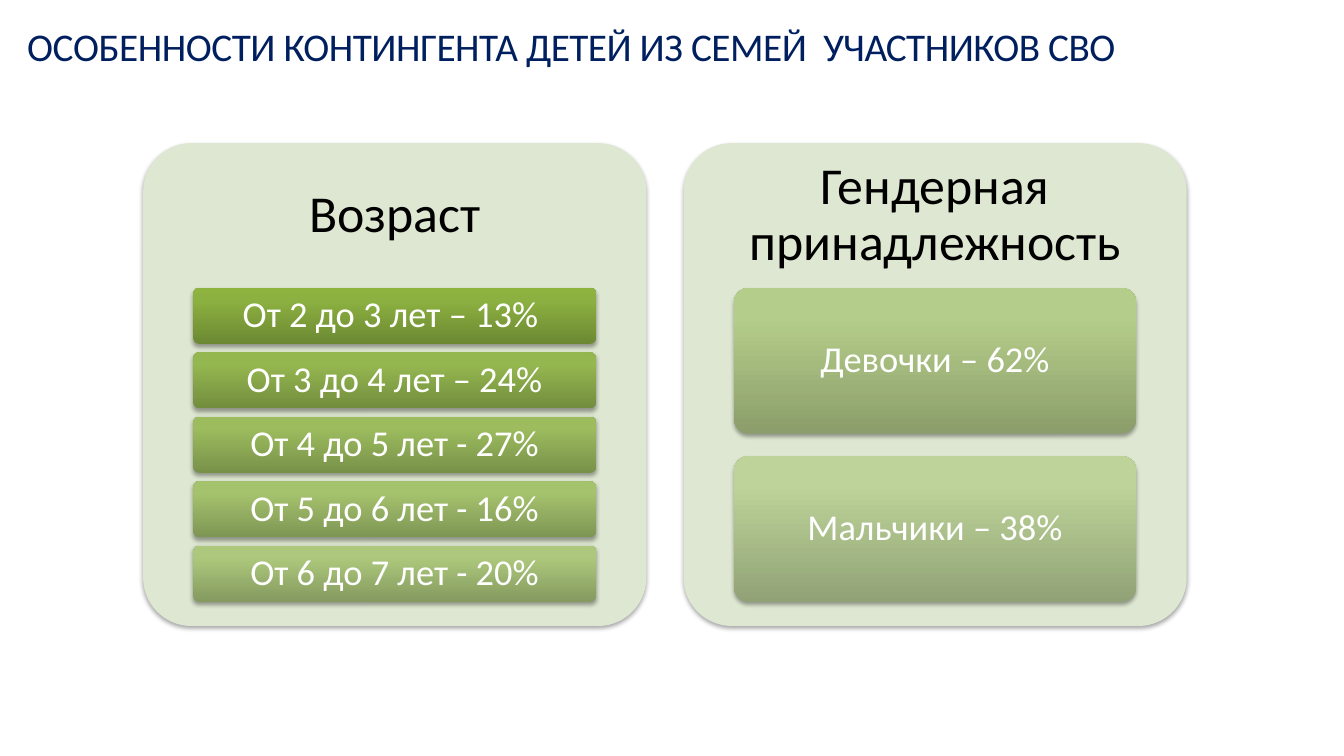
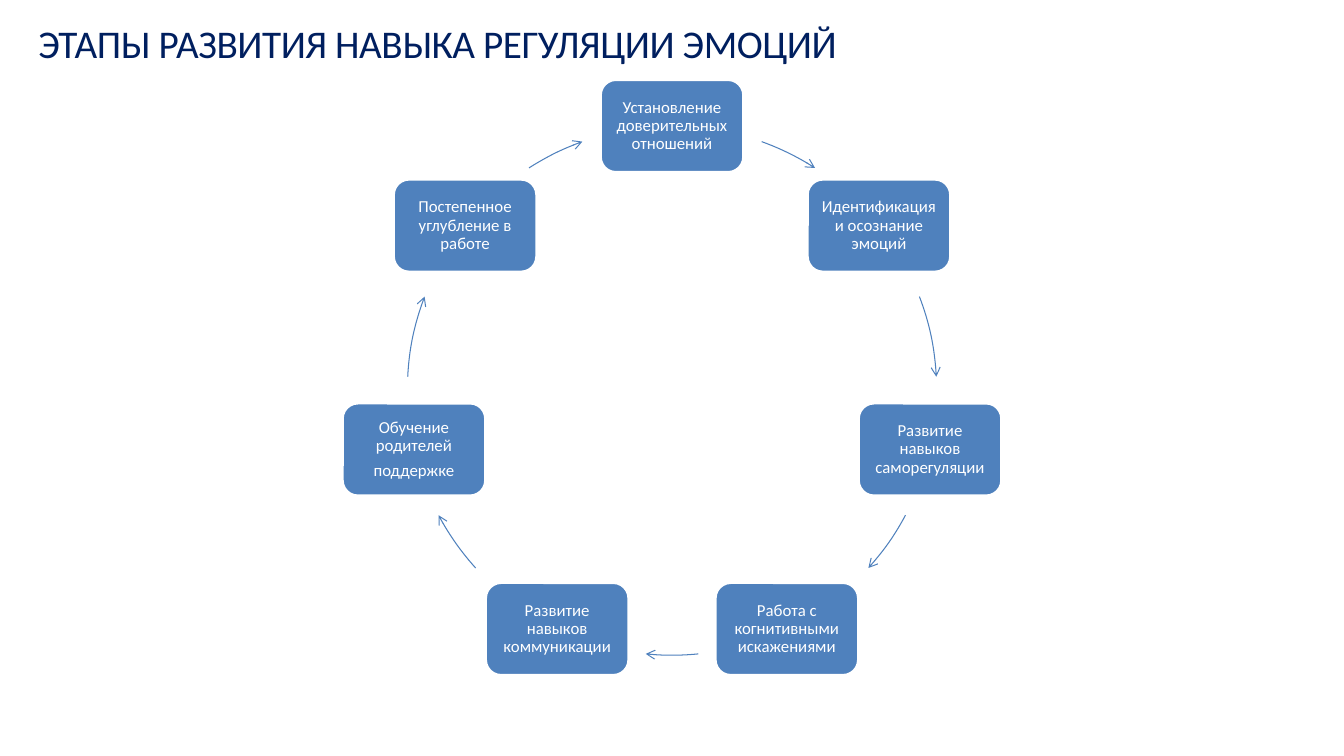
from copy import deepcopy
from math import cos, pi, sin

from lxml import etree
from pptx import Presentation
from pptx.dml.color import RGBColor
from pptx.enum.shapes import MSO_SHAPE as SHAPE
from pptx.enum.text import MSO_ANCHOR as ANCHOR, MSO_AUTO_SIZE as AUTO_SIZE, PP_ALIGN as ALIGN
from pptx.oxml.ns import qn
from pptx.util import Emu, Pt

PX = 9144  # EMU, 100 px to the inch
FONT = "Calibri"
NAVY = RGBColor(0x00, 0x1F, 0x5F)
BLACK = RGBColor(0x00, 0x00, 0x00)
WHITE = RGBColor(0xFF, 0xFF, 0xFF)
BLUE = RGBColor(0x4F, 0x81, 0xBD)
PANEL_GREEN = RGBColor(0xDE, 0xE7, 0xD1)
# Gradient stops: position, colour on the first card, colour on the last card
CARD_RAMP = [
    (0, RGBColor(0x6C, 0x89, 0x32), RGBColor(0x91, 0xA2, 0x76)),
    (0.8, RGBColor(0x8D, 0xB1, 0x41), RGBColor(0xBD, 0xD3, 0x99)),
    (1, RGBColor(0x8E, 0xB4, 0x3F), RGBColor(0xBE, 0xD5, 0x99)),
]
CARD_GAP = 0.154  # share of the card height

GROUPS = [
    ("Возраст", ["От 2 до 3 лет – 13% ", "От 3 до 4 лет – 24%", "От 4 до 5 лет - 27%",
                 "От 5 до 6 лет - 16%", "От 6 до 7 лет - 20%"]),
    ("Гендерная принадлежность", ["Девочки – 62%", "Мальчики – 38%"]),
]
STAGES = [
    "Установление доверительных отношений",
    "Идентификация и осознание эмоций",
    "Развитие навыков саморегуляции",
    "Работа с когнитивными искажениями",
    "Развитие навыков коммуникации",
    "Обучение родителей\nподдержке",
    "Постепенное углубление в работе",
]
# Degrees clockwise from the top; the left half mirrors the right
RIGHT_ARCS = [(19.8, 32.7), (69.2, 87), (118.1, 132.1)]
ARCS = RIGHT_ARCS + [(174.3, 185.7)] + [(360 - b, 360 - a) for a, b in reversed(RIGHT_ARCS)]


def px(value):
    return Emu(round(value * PX))


def blend(first, last, share):
    return RGBColor(*(round(a + (b - a) * share) for a, b in zip(first, last)))


def set_insets(tf, left, top, right, bottom):
    tf.margin_left, tf.margin_top = px(left), px(top)
    tf.margin_right, tf.margin_bottom = px(right), px(bottom)


def style_runs(p, size, color):
    for r in p.runs:
        r.font.name, r.font.size, r.font.color.rgb = FONT, Pt(size), color


def center_text(s, text, size, color, inset_x, inset_y):
    tf = s.text_frame
    tf.text = text
    tf.word_wrap = True
    tf.vertical_anchor = ANCHOR.MIDDLE
    set_insets(tf, inset_x, inset_y, inset_x, inset_y)
    for p in tf.paragraphs:
        p.alignment, p.line_spacing, p.space_after = ALIGN.CENTER, 0.9, Pt(size * 0.38)
        style_runs(p, size, color)


def add_preset(slide, kind, x, y, w, h):
    s = slide.shapes.add_shape(kind, px(x), px(y), px(w), px(h))
    s.shadow.inherit = False
    return s


def add_shadow(s):
    effects = s._element.spPr.find(qn("a:effectLst"))
    shadow = etree.SubElement(effects, qn("a:outerShdw"), blurRad="40000", dist="23000",
                              dir="5400000", rotWithShape="0")
    color = etree.SubElement(shadow, qn("a:srgbClr"), val="000000")
    etree.SubElement(color, qn("a:alpha"), val="35000")


def add_raised_rect(slide, x, y, w, h):
    s = add_preset(slide, SHAPE.ROUNDED_RECTANGLE, x, y, w, h)
    s.adjustments[0] = 0.1
    s.line.fill.background()
    add_shadow(s)
    return s


def fill_card(s, share):
    """Shade the card bottom to top, at its place along the ramp."""
    s.fill.gradient()
    s.fill.gradient_angle = 90
    stops = s._element.spPr.find(".//" + qn("a:gsLst"))
    stops.append(deepcopy(stops[0]))
    for stop, (position, first, last) in zip(s.fill.gradient_stops, CARD_RAMP):
        stop.position = position
        stop.color.rgb = blend(first, last, share)


def add_title(slide, x, y, text):
    s = slide.shapes.add_textbox(px(x), px(y), px(1261), px(66))
    tf = s.text_frame
    tf.word_wrap = True
    tf.auto_size = AUTO_SIZE.SHAPE_TO_FIT_TEXT
    set_insets(tf, 2, 24, 0, 0)
    p = tf.paragraphs[0]
    p.text = text
    p.line_spacing, p.space_before = Pt(30.2), Pt(4.8)
    style_runs(p, 28, NAVY)
    p.runs[0].font._element.set("spc", "-30")


def add_group_panel(slide, x, y, w, h, heading, cards, shares):
    s = add_raised_rect(slide, x, y, w, h)
    s.fill.solid()
    s.fill.fore_color.rgb = PANEL_GREEN
    head_h = h * 0.3
    box = slide.shapes.add_textbox(px(x), px(y), px(w), px(head_h))
    center_text(box, heading, 37, BLACK, 15, 15)

    card_h = h * 0.65 / (len(cards) + (len(cards) - 1) * CARD_GAP)
    for i, (text, share) in enumerate(zip(cards, shares)):
        top = y + head_h + i * card_h * (1 + CARD_GAP)
        card = add_raised_rect(slide, x + w * 0.1, top, w * 0.8, card_h)
        fill_card(card, share)
        center_text(card, text, 26, WHITE, 7, 5)


def add_stage(slide, cx, cy, text):
    w, h = 142, 92
    s = add_preset(slide, SHAPE.ROUNDED_RECTANGLE, cx - w / 2, cy - h / 2, w, h)
    s.fill.solid()
    s.fill.fore_color.rgb = BLUE
    s.line.color.rgb, s.line.width = WHITE, Pt(2)
    center_text(s, text, 12, WHITE, 5, 5)


def add_arc_arrow(slide, x, y, size, start, end):
    s = add_preset(slide, SHAPE.ARC, x, y, size, size)
    for i, angle in enumerate((start, end)):
        # Presets count from the right, in 60000ths of a degree; adjustments in 100000ths
        s.adjustments[i] = (angle - 90) % 360 * 0.6
    s.fill.background()
    s.line.color.rgb, s.line.width = BLUE, Pt(0.75)
    etree.SubElement(s._element.spPr.find(qn("a:ln")), qn("a:tailEnd"), type="arrow")


def add_cycle(slide, x, y, size):
    radius = size / 2
    for i, (text, (start, end)) in enumerate(zip(STAGES, ARCS)):
        angle = 2 * pi * i / len(STAGES)
        add_stage(slide, x + radius * (1 + sin(angle)), y + radius * (1 - cos(angle)), text)
        add_arc_arrow(slide, x, y, size, start, end)


def build_groups_slide(slide):
    total = sum(len(cards) for _, cards in GROUPS)
    shares = iter([i / (total - 1) for i in range(total)])
    for i, (heading, cards) in enumerate(GROUPS):
        card_shares = [next(shares) for _ in cards]
        add_group_panel(slide, 142 + i * 536, 142, 499, 479, heading, cards, card_shares)
    add_title(slide, 25, 3, "ОСОБЕННОСТИ КОНТИНГЕНТА ДЕТЕЙ ИЗ СЕМЕЙ  УЧАСТНИКОВ СВО")


def build_cycle_slide(slide):
    add_title(slide, 36, 0, "ЭТАПЫ РАЗВИТИЯ НАВЫКА РЕГУЛЯЦИИ ЭМОЦИЙ")
    add_cycle(slide, 404, 125, 525)


def main():
    prs = Presentation()
    prs.slide_width, prs.slide_height = px(1333), px(750)
    for build in (build_groups_slide, build_cycle_slide):
        build(prs.slides.add_slide(prs.slide_layouts[6]))
    prs.save("out.pptx")


if __name__ == "__main__":
    main()
